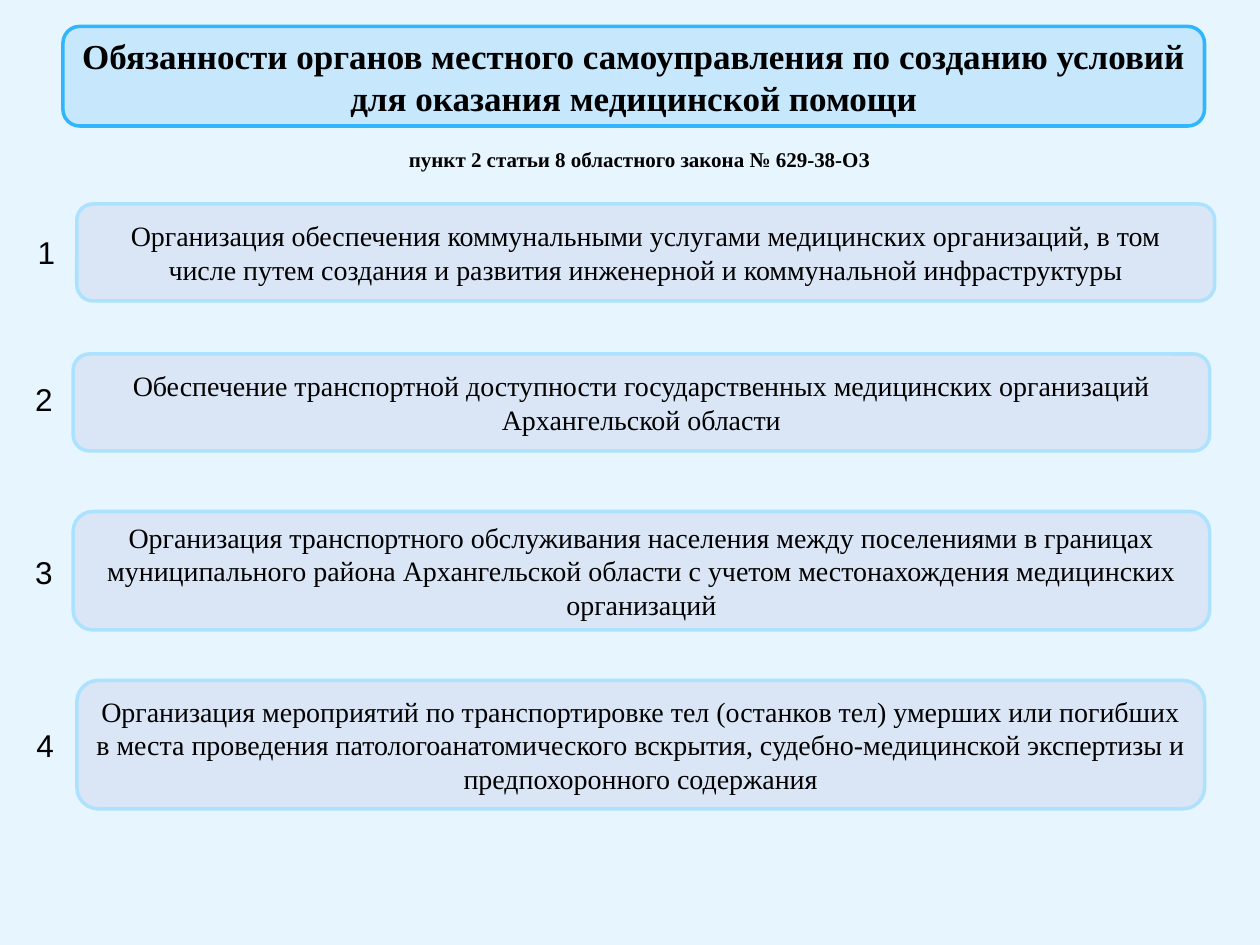
from pptx import Presentation
from pptx.dml.color import RGBColor
from pptx.enum.shapes import MSO_SHAPE
from pptx.enum.text import MSO_ANCHOR, MSO_AUTO_SIZE, PP_ALIGN
from pptx.util import Pt


def rgb(value):
    return RGBColor.from_string(value)


def write(sp, text, align, frame, font):
    """Fill sp with one paragraph; frame and font hold attribute values."""
    tf = sp.text_frame
    for name, value in frame.items():
        setattr(tf, name, value)
    p = tf.paragraphs[0]
    p.alignment = align
    r = p.add_run()
    r.text = text
    for name, value in font.items():
        setattr(r.font, name, value)
    r.font.color.rgb = rgb("000000")


prs = Presentation()
prs.slide_width, prs.slide_height = Pt(720), Pt(540)
s = prs.slides.add_slide(prs.slide_layouts[6])
s.background.fill.solid()
s.background.fill.fore_color.rgb = rgb("E6F5FE")

SERIF = "Times New Roman"
TITLE = {"name": SERIF, "size": Pt(20), "bold": True}
SUBTITLE = {"name": SERIF, "size": Pt(12), "bold": True}
DUTY = {"name": SERIF, "size": Pt(16), "bold": False}
NUMBER = {"name": "Arial", "size": Pt(18)}
BOX_FRAME = {"word_wrap": True, "vertical_anchor": MSO_ANCHOR.MIDDLE}
SUBTITLE_FRAME = BOX_FRAME | {"auto_size": MSO_AUTO_SIZE.SHAPE_TO_FIT_TEXT}
NUMBER_FRAME = {"word_wrap": False, "auto_size": MSO_AUTO_SIZE.SHAPE_TO_FIT_TEXT}

title = ("Обязанности органов местного самоуправления по созданию условий "
         "для оказания медицинской помощи")
# box left, top, width, height; number left, top; text
duties = [
    (43.9, 116.6, 650.2, 55.4, 14.4, 129.6,
     "Организация обеспечения коммунальными услугами медицинских организаций, "
     "в том числе путем создания и развития инженерной и коммунальной инфраструктуры"),
    (41.8, 202.3, 649.4, 55.4, 13, 213.8,
     "Обеспечение транспортной доступности государственных медицинских организаций "
     "Архангельской области"),
    (41.8, 292.3, 649.4, 67.7, 13, 312.5,
     "Организация транспортного обслуживания населения между поселениями в границах "
     "муниципального района Архангельской области с учетом местонахождения "
     "медицинских организаций"),
    (43.9, 388.8, 644.4, 73.4, 13.7, 411.1,
     "Организация мероприятий по транспортировке тел (останков тел) умерших или "
     "погибших в места проведения патологоанатомического вскрытия, "
     "судебно-медицинской экспертизы и предпохоронного содержания"),
]

boxes = [((36, 15.1, 652.3, 56.9), "C6E7FC", "31B6FD", title, TITLE)]
boxes += [(duty[:4], "DAE6F6", "ADE2FE", duty[-1], DUTY) for duty in duties]
for place, fill, line, text, font in boxes:
    sp = s.shapes.add_shape(MSO_SHAPE.ROUNDED_RECTANGLE, *map(Pt, place))
    sp.shadow.inherit = False
    sp.fill.solid()
    sp.fill.fore_color.rgb = rgb(fill)
    sp.line.color.rgb = rgb(line)
    sp.line.width = Pt(2)
    write(sp, text, PP_ALIGN.CENTER, BOX_FRAME, font)

sp = s.shapes.add_textbox(Pt(20.9), Pt(79.9), Pt(686.2), Pt(21.6))
write(sp, " пункт 2 статьи 8 областного закона № 629-38-ОЗ",
      PP_ALIGN.CENTER, SUBTITLE_FRAME, SUBTITLE)

for number, (*_, left, top, _text) in enumerate(duties, 1):
    sp = s.shapes.add_textbox(Pt(left), Pt(top), Pt(24.5), Pt(28.8))
    write(sp, str(number), PP_ALIGN.LEFT, NUMBER_FRAME, NUMBER)

prs.save("out.pptx")
